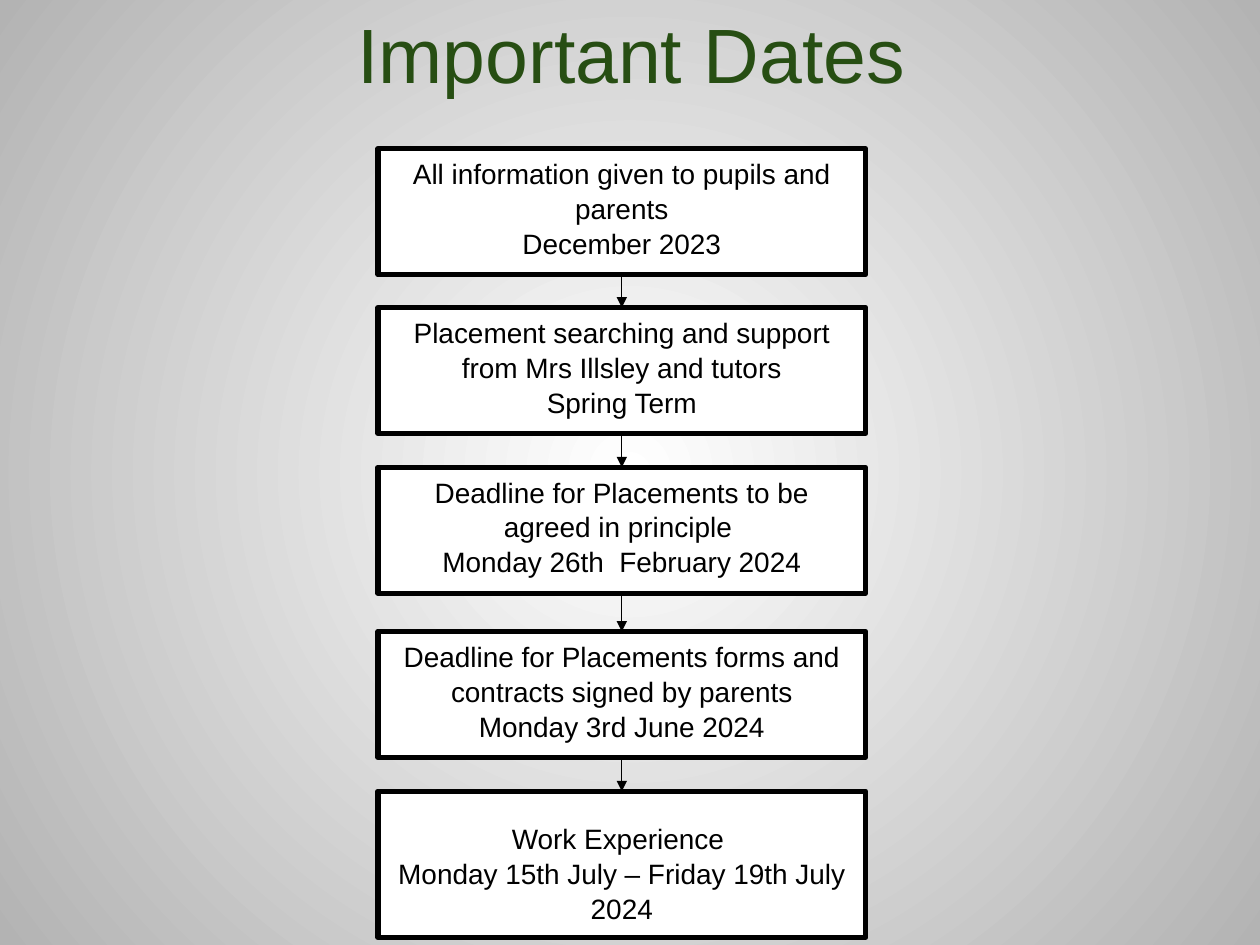
from dataclasses import dataclass
from itertools import pairwise

from lxml import etree
from pptx import Presentation
from pptx.dml.color import RGBColor
from pptx.enum.shapes import MSO_CONNECTOR, MSO_SHAPE
from pptx.enum.text import MSO_ANCHOR, PP_ALIGN
from pptx.oxml.ns import qn
from pptx.shapes.autoshape import Shape
from pptx.slide import Slide
from pptx.text.text import TextFrame
from pptx.util import Cm, Pt

RECTANGLE = MSO_SHAPE.RECTANGLE
STRAIGHT = MSO_CONNECTOR.STRAIGHT
TOP = MSO_ANCHOR.TOP
CENTER = PP_ALIGN.CENTER
BOTTOM_SITE, TOP_SITE = 2, 0

FONT = "Arial"
COLORS = {
    "title": "274E13",
    "ink": "000000",
    "box": "FFFFFF",
    "glow": "FFFFFF",
    "edge": "B3B3B3",
}
BOX_LEFT, BOX_WIDTH = 7.62, 9.83


@dataclass
class Milestone:
    top: float
    task: str
    date: str
    height: float = 2.54
    margin_top: float = 0.13


MILESTONES = [
    Milestone(3.0, "All information given to pupils and parents", "December 2023"),
    Milestone(6.2, "Placement searching and support from Mrs Illsley and tutors",
              "Spring Term"),
    Milestone(9.42, "Deadline for Placements to be agreed in principle ",
              "Monday 26th  February 2024"),
    Milestone(12.73, "Deadline for Placements forms and contracts signed by parents",
              "Monday 3rd June 2024"),
    Milestone(15.95, "Work Experience ", "Monday 15th July – Friday 19th July 2024",
              height=2.95, margin_top=0.58),
]


def color(name: str) -> RGBColor:
    return RGBColor.from_string(COLORS[name])


def format_text(frame: TextFrame, size: float, color_name: str,
                line_spacing: float) -> None:
    frame.word_wrap = True
    frame.vertical_anchor = TOP
    for paragraph in frame.paragraphs:
        paragraph.alignment = CENTER
        paragraph.line_spacing = line_spacing
        for run in paragraph.runs:
            run.font.name = FONT
            run.font.size = Pt(size)
            run.font.color.rgb = color(color_name)


def paint_background(slide: Slide) -> None:
    fill = slide.background.fill
    fill.gradient()
    for stop, name in zip(fill.gradient_stops, ("glow", "edge")):
        stop.color.rgb = color(name)
    # Turn the linear gradient into a circular one around the centre
    gradient = slide.element.find(".//" + qn("a:gradFill"))
    gradient.remove(gradient.find(qn("a:lin")))
    circle = etree.SubElement(gradient, qn("a:path"), {"path": "circle"})
    etree.SubElement(circle, qn("a:fillToRect"),
                     {side: "50000" for side in ("l", "t", "r", "b")})


def add_title(slide: Slide, text: str) -> None:
    title = slide.shapes.title
    title.left, title.top = Cm(1.3), Cm(0)
    title.width, title.height = Cm(22.86), Cm(3.18)
    title.text_frame.text = text
    format_text(title.text_frame, 44, "title", 1.0)


def add_milestone(slide: Slide, milestone: Milestone) -> Shape:
    box = slide.shapes.add_shape(RECTANGLE, Cm(BOX_LEFT), Cm(milestone.top),
                                 Cm(BOX_WIDTH), Cm(milestone.height))
    box.shadow.inherit = False
    box.fill.solid()
    box.fill.fore_color.rgb = color("box")
    box.line.color.rgb = color("ink")
    box.line.width = Pt(3)
    frame = box.text_frame
    frame.margin_top = Cm(milestone.margin_top)
    frame.text = f"{milestone.task}\n{milestone.date}"
    format_text(frame, 16, "ink", 1.04)
    return box


def add_arrow(slide: Slide, upper: Shape, lower: Shape) -> None:
    arrow = slide.shapes.add_connector(STRAIGHT, 0, 0, 0, 0)
    arrow.begin_connect(upper, BOTTOM_SITE)
    arrow.end_connect(lower, TOP_SITE)
    arrow.line.color.rgb = color("ink")
    arrow.line.width = Pt(0.75)
    properties = arrow.element.spPr
    etree.SubElement(properties.find(qn("a:ln")), qn("a:tailEnd"), {"type": "triangle"})
    etree.SubElement(properties, qn("a:effectLst"))


def main() -> None:
    presentation = Presentation()
    presentation.slide_width, presentation.slide_height = Cm(25.4), Cm(19.05)
    slide = presentation.slides.add_slide(presentation.slide_layouts[5])

    paint_background(slide)
    add_title(slide, "Important Dates")

    # Timeline boxes, then the arrows between neighbours
    boxes = [add_milestone(slide, milestone) for milestone in MILESTONES]
    for upper, lower in pairwise(boxes):
        add_arrow(slide, upper, lower)

    presentation.save("out.pptx")


if __name__ == "__main__":
    main()
